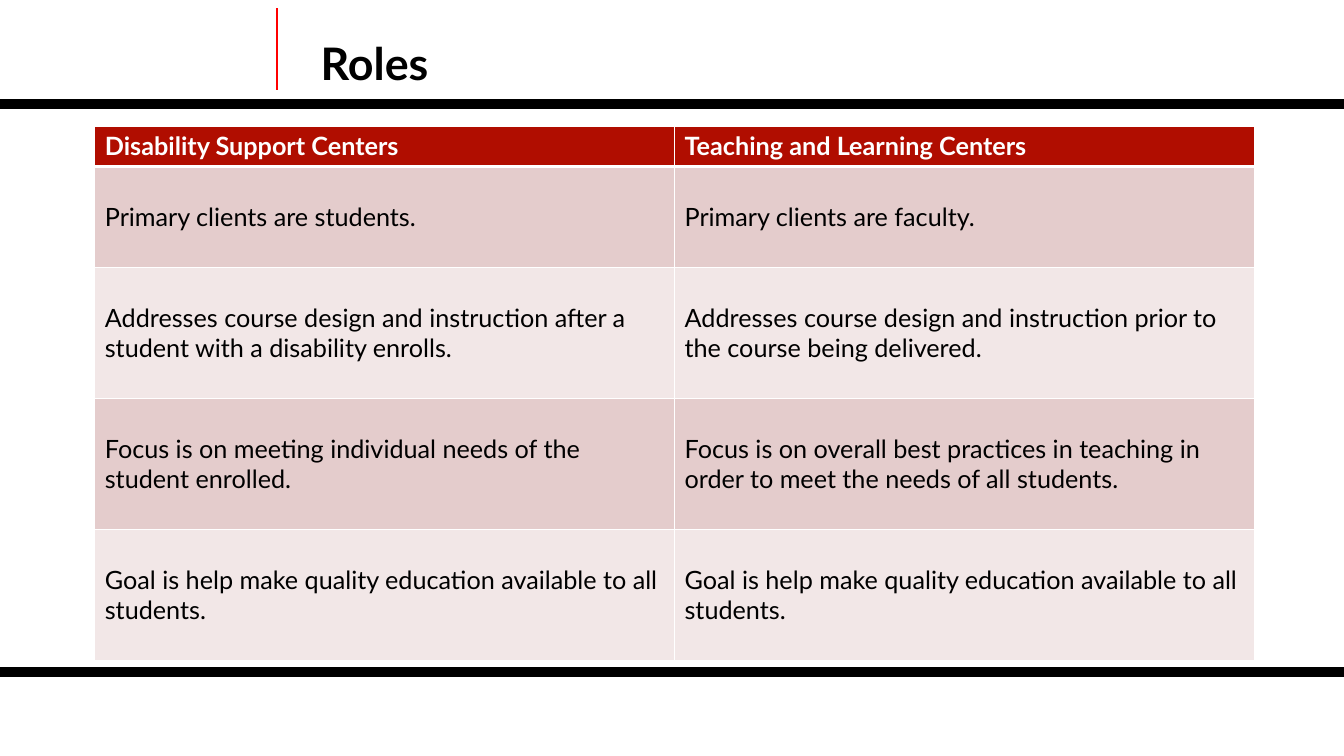
from dataclasses import dataclass

from lxml.etree import SubElement
from pptx import Presentation
from pptx.dml.color import RGBColor
from pptx.enum.shapes import MSO_CONNECTOR
from pptx.enum.text import MSO_ANCHOR, PP_ALIGN
from pptx.oxml.ns import qn
from pptx.util import Inches, Pt


@dataclass(frozen=True)
class Theme:
    font: str = "Lato"
    title_size: int = 32
    body_size: int = 18
    black: str = "000000"
    white: str = "FFFFFF"
    accent: str = "FF0000"
    header: str = "B00D00"
    bands: tuple = ("E4CCCC", "F2E7E7")


THEME = Theme()
SLIDE_W, SLIDE_H = 13.33, 7.5

ROLES = [
    ("Disability Support Centers", "Teaching and Learning Centers"),
    ("Primary clients are students.", "Primary clients are faculty."),
    ("Addresses course design and instruction after a student with a disability enrolls.",
     "Addresses course design and instruction prior to the course being delivered."),
    ("Focus is on meeting individual needs of the student enrolled.",
     "Focus is on overall best practices in teaching in order to meet the needs of all students."),
    ("Goal is help make quality education available to all students.",
     "Goal is help make quality education available to all students."),
]
ROW_HEIGHTS = [0.39, 1.0, 1.3, 1.3, 1.3]


def format_text(p, size, color, bold=False):
    p.alignment = PP_ALIGN.LEFT
    for r in p.runs:
        r.font.name = THEME.font
        r.font.size = Pt(size)
        r.font.bold = bold
        r.font.color.rgb = RGBColor.from_string(color)


def add_rule(s, x1, y1, x2, y2, color, width):
    line = s.shapes.add_connector(MSO_CONNECTOR.STRAIGHT, *map(Inches, (x1, y1, x2, y2)))
    line.line.color.rgb = RGBColor.from_string(color)
    line.line.width = Pt(width)
    SubElement(line._element.spPr, qn("a:effectLst"))


def set_borders(cell, color, bottom):
    """Borders must come before the fill in the cell properties."""
    tc_pr = cell._tc.get_or_add_tcPr()
    for side, width in (("L", 1), ("R", 1), ("T", 1), ("B", bottom)):
        ln = SubElement(tc_pr, qn(f"a:ln{side}"), w=str(Pt(width)))
        fill = SubElement(ln, qn("a:solidFill"))
        SubElement(fill, qn("a:srgbClr"), val=color)


def add_frame(s, left, top, width, height):
    # Red divider beside the title, black bands above and below the content
    add_rule(s, left + 2.75, top + 0.08, left + 2.75, top + 0.89, THEME.accent, 1.25)
    for y in (1.03, height - 0.83):
        add_rule(s, left, top + y, left + width, top + y, THEME.black, 7)


def add_title(s, text, left, top, width, height):
    title = s.shapes.title
    title.left, title.top, title.width, title.height = map(Inches, (left, top, width, height))
    tf = title.text_frame
    tf.text = text
    tf.vertical_anchor = MSO_ANCHOR.MIDDLE
    format_text(tf.paragraphs[0], THEME.title_size, THEME.black, bold=True)


def add_roles_table(s, left, top, width):
    box = map(Inches, (left, top, width, sum(ROW_HEIGHTS)))
    table = s.shapes.add_table(len(ROLES), len(ROLES[0]), *box).table
    for i, (texts, height) in enumerate(zip(ROLES, ROW_HEIGHTS)):
        table.rows[i].height = Inches(height)
        is_header = i == 0
        fill = THEME.header if is_header else THEME.bands[(i - 1) % 2]
        color = THEME.white if is_header else THEME.black
        for j, text in enumerate(texts):
            cell = table.cell(i, j)
            cell.text = text
            cell.vertical_anchor = MSO_ANCHOR.MIDDLE
            set_borders(cell, THEME.white, bottom=3 if is_header else 1)
            cell.fill.solid()
            cell.fill.fore_color.rgb = RGBColor.from_string(fill)
            format_text(cell.text_frame.paragraphs[0], THEME.body_size, color, is_header)


def main():
    prs = Presentation()
    prs.slide_width, prs.slide_height = Inches(SLIDE_W), Inches(SLIDE_H)
    s = prs.slides.add_slide(prs.slide_layouts[5])
    add_frame(s, 0, 0, SLIDE_W, SLIDE_H)
    add_title(s, "Roles", 3.08, 0, 9.92, 1.25)
    add_roles_table(s, 0.94, 1.25, 11.5)
    prs.save("out.pptx")


if __name__ == "__main__":
    main()
